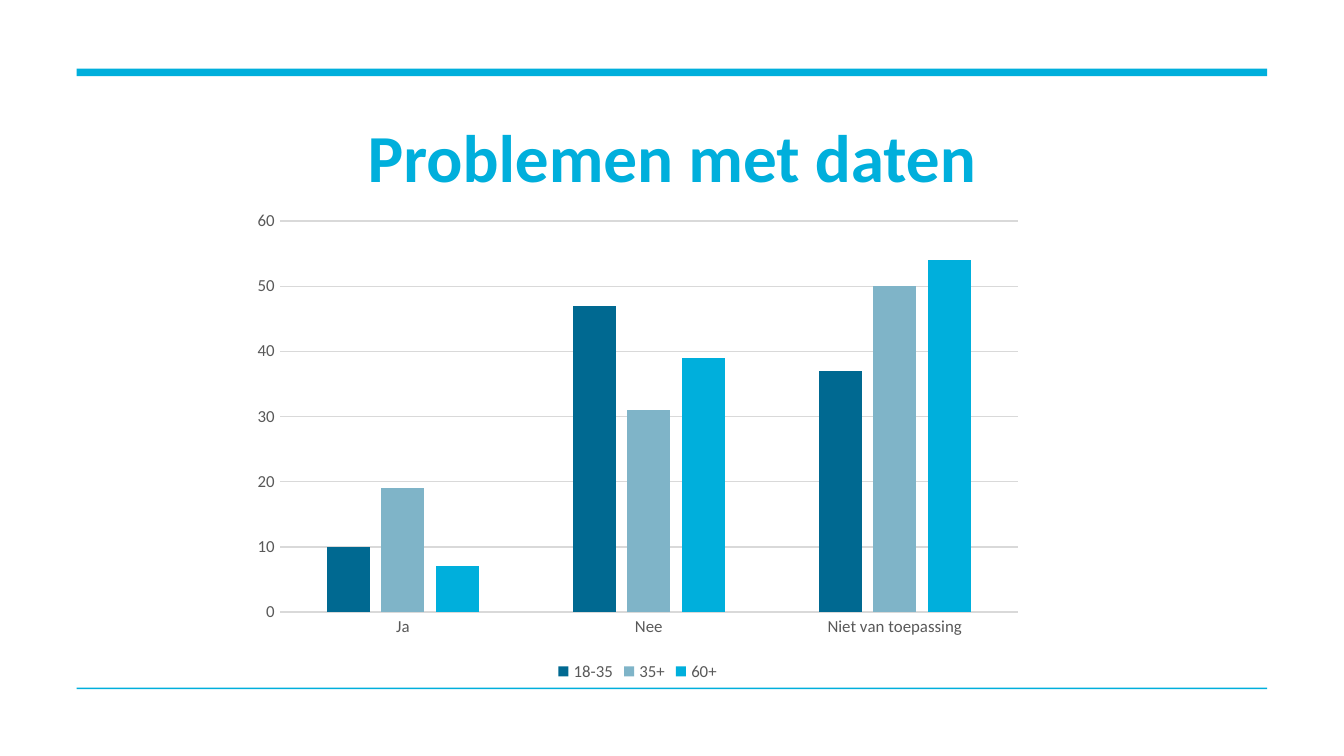
from pptx import Presentation
from pptx.chart.data import CategoryChartData
from pptx.dml.color import RGBColor
from pptx.enum.chart import XL_CHART_TYPE, XL_LEGEND_POSITION, XL_TICK_MARK
from pptx.enum.shapes import MSO_SHAPE
from pptx.enum.text import MSO_ANCHOR, MSO_AUTO_SIZE, PP_ALIGN
from pptx.util import Cm, Pt

COLUMNS = XL_CHART_TYPE.COLUMN_CLUSTERED
BOTTOM = XL_LEGEND_POSITION.BOTTOM
NO_TICK = XL_TICK_MARK.NONE
RECTANGLE = MSO_SHAPE.RECTANGLE
MIDDLE = MSO_ANCHOR.MIDDLE
NO_FIT = MSO_AUTO_SIZE.NONE
CENTER = PP_ALIGN.CENTER

FONT = "Calibri"
ACCENT = "00AFDC"
GREY = "595959"
GRID = "D9D9D9"

CATEGORIES = ["Ja", "Nee", "Niet van toepassing"]
AGE_GROUPS = [
    ("18-35", [10, 47, 37], "006991"),
    ("35+", [19, 31, 50], "7FB4C8"),
    ("60+", [7, 39, 54], ACCENT),
]


def colour(value):
    return RGBColor.from_string(value)


def style_font(font, size, value):
    font.name = FONT
    font.size = Pt(size)
    font.color.rgb = colour(value)


def style_line(line, value):
    line.color.rgb = colour(value)
    line.width = Pt(0.75)


def add_rule(page, box):
    rule = page.shapes.add_shape(RECTANGLE, *box)
    rule.shadow.inherit = False
    rule.fill.solid()
    rule.fill.fore_color.rgb = colour(ACCENT)
    rule.line.fill.background()


def fill_title(page, box, text):
    title = page.shapes.title
    title.left, title.top, title.width, title.height = box
    frame = title.text_frame
    frame.margin_left = frame.margin_top = 0
    frame.margin_right = frame.margin_bottom = 0
    frame.vertical_anchor = MIDDLE
    frame.word_wrap = True
    frame.auto_size = NO_FIT
    para = frame.paragraphs[0]
    para.alignment = CENTER
    para.line_spacing = Pt(42)
    span = para.add_run()
    span.text = text
    span.font.bold = True
    style_font(span.font, 36, ACCENT)


def add_age_chart(page, box):
    data = CategoryChartData()
    data.categories = CATEGORIES
    for name, values, _ in AGE_GROUPS:
        data.add_series(name, values)
    chart = page.shapes.add_chart(COLUMNS, *box, data).chart
    chart.has_title = False
    style_font(chart.font, 10, "000000")

    # Columns
    plot = chart.plots[0]
    plot.gap_width = 219
    plot.overlap = -27
    plot.vary_by_categories = False
    for series, (_, _, fill) in zip(plot.series, AGE_GROUPS):
        series.format.fill.solid()
        series.format.fill.fore_color.rgb = colour(fill)

    # Axes
    for axis in (chart.category_axis, chart.value_axis):
        axis.major_tick_mark = axis.minor_tick_mark = NO_TICK
        style_font(axis.tick_labels.font, 9, GREY)
    style_line(chart.category_axis.format.line, GRID)
    scale = chart.value_axis
    scale.minimum_scale = 0
    scale.maximum_scale = 60
    scale.major_unit = 10
    scale.format.line.fill.background()
    style_line(scale.major_gridlines.format.line, GRID)

    # Legend
    chart.has_legend = True
    chart.legend.position = BOTTOM
    chart.legend.include_in_layout = False
    style_font(chart.legend.font, 9, GREY)


def build_chart_page(deck):
    page = deck.slides.add_slide(deck.slide_layouts[5])
    left, width = Cm(1.45), Cm(22.5)
    # Rules above and below the content
    add_rule(page, (left, Cm(1.3), width, Cm(0.14)))
    add_rule(page, (left, Cm(13), width, Cm(0.03)))
    # Content
    fill_title(page, (left, Cm(1.75), width, Cm(2.41)), "Problemen met daten")
    add_age_chart(page, (Cm(4.57), Cm(3.81), Cm(14.96), Cm(9.17)))


def main():
    deck = Presentation()
    deck.slide_width = Cm(25.4)
    deck.slide_height = Cm(14.29)
    build_chart_page(deck)
    deck.save("out.pptx")


if __name__ == "__main__":
    main()
